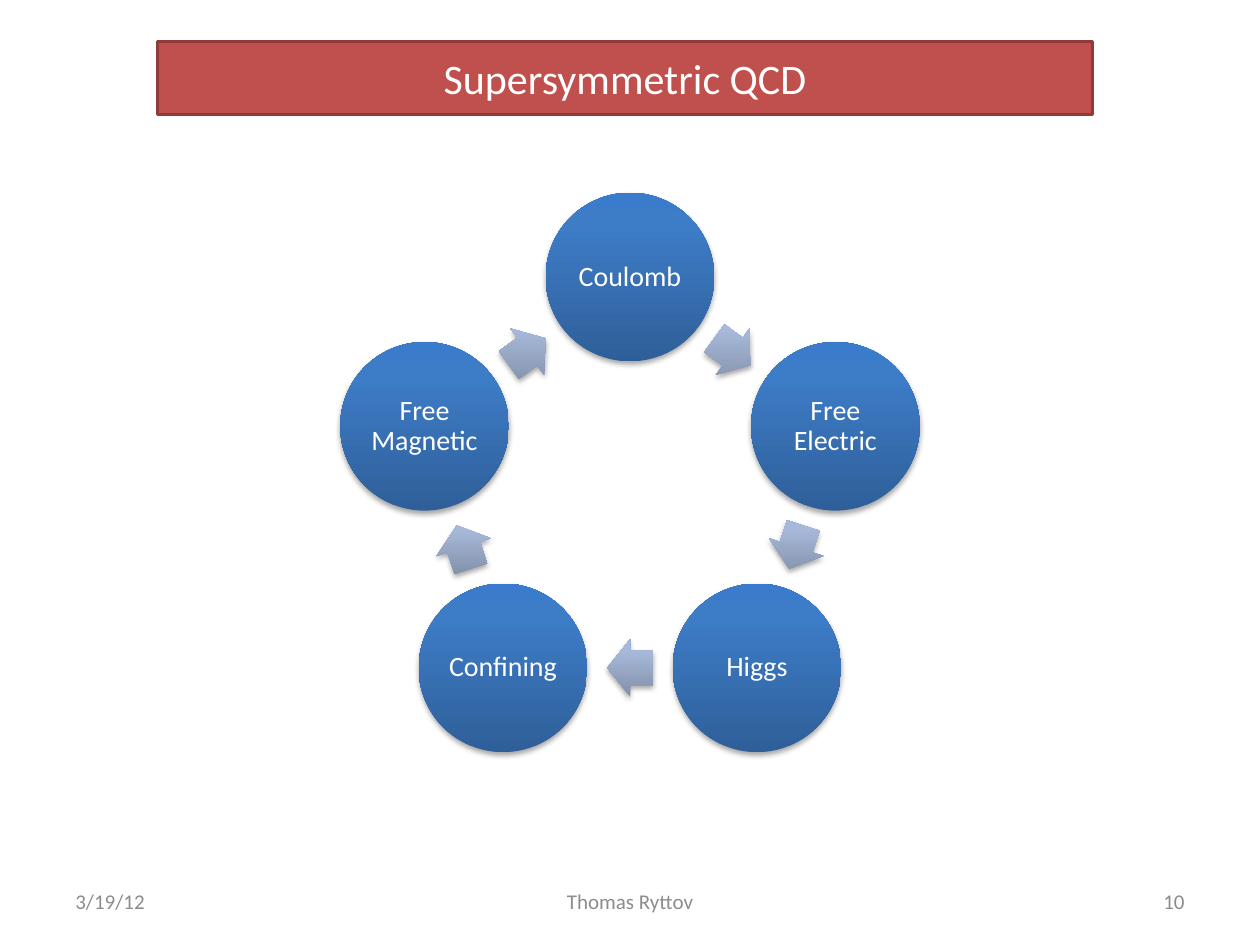
from math import cos, pi, sin

from lxml.etree import SubElement as Sub
from pptx import Presentation
from pptx.dml.color import RGBColor as Rgb
from pptx.enum.shapes import MSO_SHAPE as Kind
from pptx.enum.text import MSO_ANCHOR as Anchor, PP_ALIGN as Align
from pptx.oxml.ns import qn
from pptx.util import Inches as Inch, Pt

WIDE, HIGH = 10, 7.5
FONT = "Calibri"
HUES = {
    "white": "FFFFFF", "gray": "8C8C8C", "red": "C0504D", "edge": "8E3B39",
    "black": "000000",
}
BALL = {0: "2F5F99", 80: "3D7CC7", 100: "3A7CCB"}
ARROW = {0: "818FA8", 80: "A7B9DA", 100: "A7BADC"}
NODES = ["Coulomb", "Free Electric", "Higgs", "Confining", "Free Magnetic"]
FOOT = [
    (0, 0.26, "3/19/12", Align.LEFT),
    (0.324, 0.352, "Thomas Ryttov", Align.CENTER),
    (0.741, 0.259, "10", Align.RIGHT),
]


def share(left, top, wide, high):
    """Turn shares of the slide into a box in inches."""
    return left * WIDE, top * HIGH, wide * WIDE, high * HIGH


def write(shape, text, size, hue, align=Align.CENTER, inset=None, gap=None):
    """Put one run of text in the middle of a shape."""
    frame = shape.text_frame
    frame.word_wrap = True
    frame.vertical_anchor = Anchor.MIDDLE
    if inset is not None:
        frame.margin_left = frame.margin_right = Inch(inset)
        frame.margin_top = frame.margin_bottom = Inch(inset)
    para = frame.paragraphs[0]
    para.alignment = align
    para.line_spacing = gap
    run = para.add_run()
    run.text = text
    run.font.size = Pt(size)
    run.font.name = FONT
    run.font.color.rgb = Rgb.from_string(HUES[hue])


def shade(shape, stops):
    """Give a shape an upright gradient, no line and a soft shadow."""
    shape.line.fill.background()
    shape.shadow.inherit = False
    shape.fill.gradient()
    props = shape.element.spPr
    grad = props.find(qn("a:gradFill"))
    grad.set("rotWithShape", "0")
    for part in list(grad):
        grad.remove(part)
    row = Sub(grad, qn("a:gsLst"))
    for place, hue in stops.items():
        stop = Sub(row, qn("a:gs"), pos=str(place * 1000))
        Sub(stop, qn("a:srgbClr"), val=hue)
    Sub(grad, qn("a:lin"), ang=str(270 * 60000), scaled="0")
    cast = Sub(
        props.find(qn("a:effectLst")), qn("a:outerShdw"),
        blurRad=str(Pt(3.1)), dist=str(Pt(1.8)), dir=str(90 * 60000),
        rotWithShape="0",
    )
    tint = Sub(cast, qn("a:srgbClr"), val=HUES["black"])
    Sub(tint, qn("a:alpha"), val="35000")


def center(shapes, kind, x, y, wide, high):
    """Add a preset shape around a center point."""
    return shapes.add_shape(
        kind, Inch(x - wide / 2), Inch(y - high / 2), Inch(wide), Inch(high)
    )


def title(shapes, box, text):
    """Draw the title bar."""
    bar = shapes.add_shape(Kind.RECTANGLE, *map(Inch, box))
    bar.shadow.inherit = False
    bar.fill.solid()
    bar.fill.fore_color.rgb = Rgb.from_string(HUES["red"])
    bar.line.color.rgb = Rgb.from_string(HUES["edge"])
    bar.line.width = Pt(2)
    write(bar, text, 24, "white")


def cycle(shapes, box, names):
    """Draw a ring of balls with an arrow between each pair."""
    left, top, wide, high = box
    ball = 0.291 * wide
    turn = 2 * pi / len(names)
    ring = (high - ball) / (1 + cos(turn / 2))
    mid, hub = left + wide / 2, top + ball / 2 + ring
    reach = ring * cos(turn / 2)
    for step, name in enumerate(names):
        angle = step * turn
        node = center(
            shapes, Kind.OVAL, mid + ring * sin(angle),
            hub - ring * cos(angle), ball, ball,
        )
        shade(node, BALL)
        write(node, name, 16, "white", inset=0.02, gap=0.9)
        angle += turn / 2
        arrow = center(
            shapes, Kind.RIGHT_ARROW, mid + reach * sin(angle),
            hub - reach * cos(angle), 0.27 * ball, 0.34 * ball,
        )
        arrow.adjustments[0], arrow.adjustments[1] = 0.6, 0.5
        arrow.rotation = round(angle * 180 / pi)
        shade(arrow, ARROW)


def footer(shapes, box, parts):
    """Write the date, author and page number along the bottom."""
    left, top, wide, high = box
    for start, span, text, align in parts:
        area = left + start * wide, top, span * wide, high
        note = shapes.add_textbox(*map(Inch, area))
        write(note, text, 12, "gray", align)


def main():
    """Build and save the slide."""
    deck = Presentation()
    deck.slide_width, deck.slide_height = Inch(WIDE), Inch(HIGH)
    shapes = deck.slides.add_slide(deck.slide_layouts[6]).shapes
    footer(shapes, share(0.05, 0.927, 0.9, 0.053), FOOT)
    cycle(shapes, share(0.27, 0.204, 0.46, 0.592), NODES)
    title(shapes, share(0.125, 0.044, 0.742, 0.077), "Supersymmetric QCD")
    deck.save("out.pptx")


if __name__ == "__main__":
    main()
